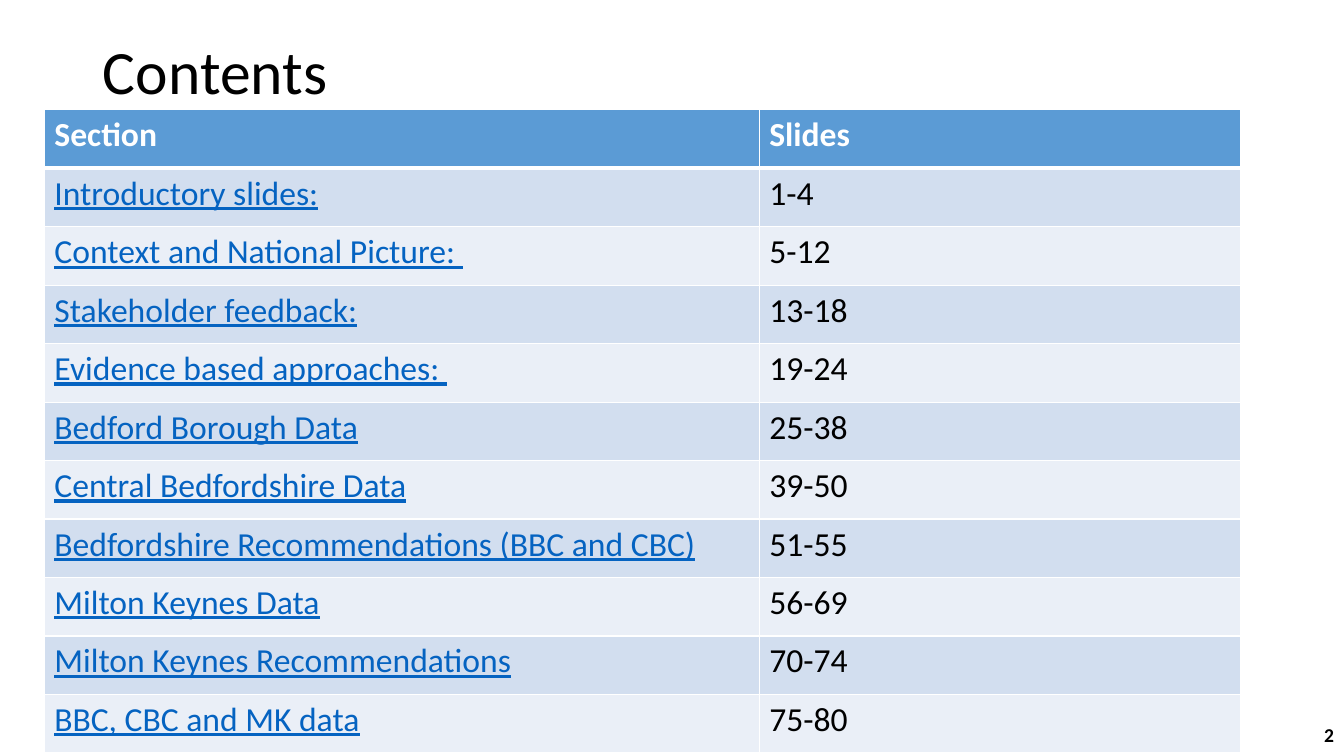
import pptx
import pptx.dml.color
import pptx.enum.text
import pptx.oxml
import pptx.util
from pptx.util import Inches

COLORS = {
    "text": "000000",
    "white": "FFFFFF",
    "header": "5B9BD5",
    "odd_row": "D2DEEF",
    "even_row": "EAEFF7",
    "link": "0563C1",
}
SECTIONS = [
    ("Section", "Slides"),
    ("Introductory slides:", "1-4"),
    ("Context and National Picture: ", "5-12"),
    ("Stakeholder feedback:", "13-18"),
    ("Evidence based approaches: ", "19-24"),
    ("Bedford Borough Data", "25-38"),
    ("Central Bedfordshire Data", "39-50"),
    ("Bedfordshire Recommendations (BBC and CBC)", "51-55"),
    ("Milton Keynes Data", "56-69"),
    ("Milton Keynes Recommendations", "70-74"),
    ("BBC, CBC and MK data", "75-80"),
]
DRAWING_NS = "http://schemas.openxmlformats.org/drawingml/2006/main"


def format_text(text_frame, size, color, bold=False, underline=False):
    for run in text_frame.paragraphs[0].runs:
        run.font.name = "Calibri"
        run.font.size = pptx.util.Pt(size)
        run.font.color.rgb = pptx.dml.color.RGBColor.from_string(COLORS[color])
        run.font.bold = bold
        run.font.underline = underline


def add_borders(cell, top, bottom):
    """Draw white cell borders; top and bottom are widths in points."""
    properties = cell._tc.get_or_add_tcPr()
    for side, width in (("L", 1), ("R", 1), ("T", top), ("B", bottom)):
        properties.append(pptx.oxml.parse_xml(
            f'<a:ln{side} xmlns:a="{DRAWING_NS}" w="{pptx.util.Pt(width)}">'
            f'<a:solidFill><a:srgbClr val="{COLORS["white"]}"/></a:solidFill>'
            f'</a:ln{side}>'))


presentation = pptx.Presentation()
presentation.slide_width = Inches(13.33)
presentation.slide_height = Inches(7.5)
slide = presentation.slides.add_slide(presentation.slide_layouts[5])

title = slide.shapes.title
title.left, title.top = Inches(0.92), Inches(0.01)
title.width, title.height = Inches(11.5), Inches(1.45)
title.text_frame.text = "Contents"
title.text_frame.vertical_anchor = pptx.enum.text.MSO_ANCHOR.MIDDLE
title.text_frame.paragraphs[0].alignment = pptx.enum.text.PP_ALIGN.LEFT
title.text_frame.paragraphs[0].line_spacing = 0.9
format_text(title.text_frame, 44, "text")

page_number = slide.shapes.add_textbox(Inches(10.33), Inches(7.09), Inches(3), Inches(0.4))
page_number.text_frame.word_wrap = True
page_number.text_frame.vertical_anchor = pptx.enum.text.MSO_ANCHOR.MIDDLE
page_number.text_frame.text = "2"
page_number.text_frame.paragraphs[0].alignment = pptx.enum.text.PP_ALIGN.RIGHT
format_text(page_number.text_frame, 14, "text", bold=True)

contents = slide.shapes.add_table(
    len(SECTIONS), 2, Inches(0.44), Inches(1.09), Inches(11.86), Inches(6.38)).table
contents.columns[0].width = Inches(7.09)
contents.columns[1].width = Inches(4.77)

for row, labels in enumerate(SECTIONS):
    contents.rows[row].height = Inches(0.58)
    is_header = row == 0
    fill = "header" if is_header else "odd_row" if row % 2 else "even_row"
    for column, label in enumerate(labels):
        cell = contents.cell(row, column)
        add_borders(cell, top=3 if row == 1 else 1, bottom=3 if is_header else 1)
        cell.fill.solid()
        cell.fill.fore_color.rgb = pptx.dml.color.RGBColor.from_string(COLORS[fill])
        cell.text_frame.text = label
        is_link = column == 0 and not is_header
        color = "white" if is_header else "link" if is_link else "text"
        format_text(cell.text_frame, 24, color, bold=is_header, underline=is_link)

presentation.save("out.pptx")
